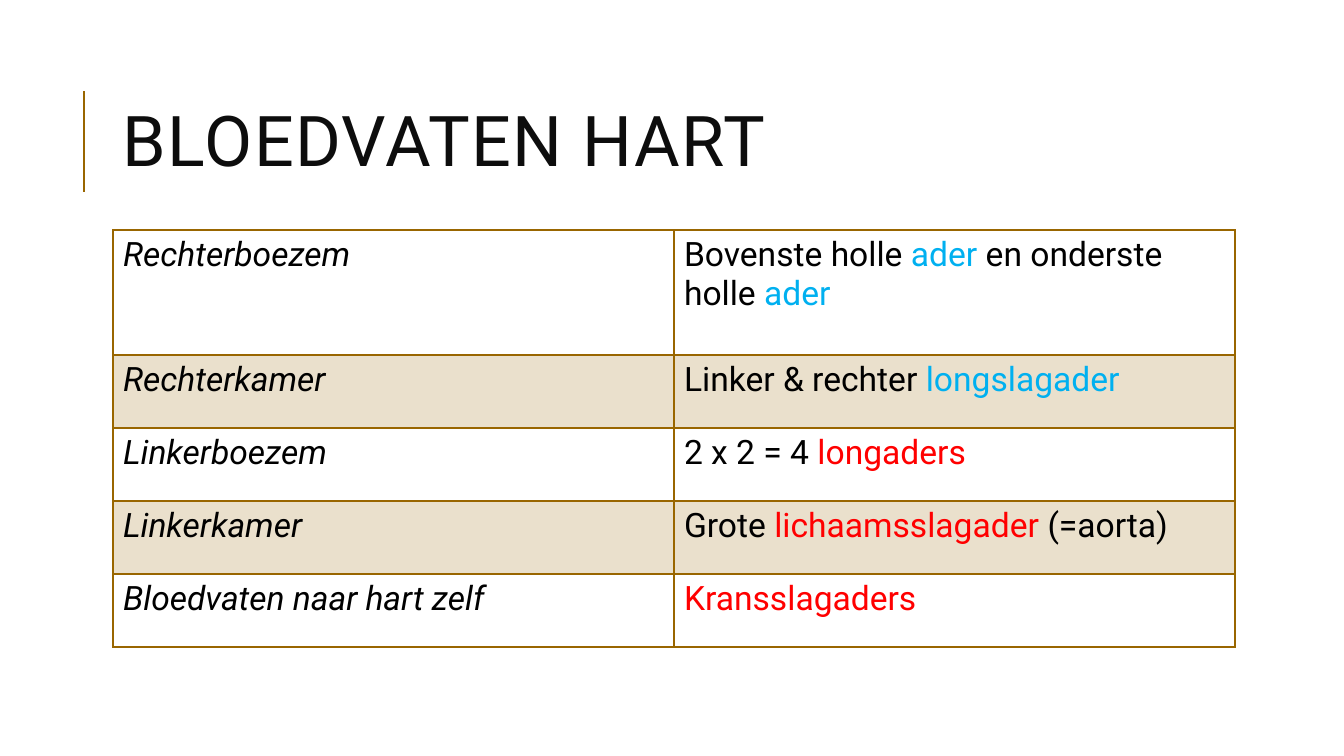
from lxml import etree
from pptx import Presentation
from pptx.dml.color import RGBColor
from pptx.enum.shapes import MSO_CONNECTOR
from pptx.enum.text import MSO_ANCHOR
from pptx.oxml.ns import qn
from pptx.util import Pt

STRAIGHT = MSO_CONNECTOR.STRAIGHT
MIDDLE = MSO_ANCHOR.MIDDLE

# Content
FONT = "Roboto"
BROWN, BLACK, INK = "996600", "000000", "0D0D0D"
BLUE, RED = "00B0F0", "FF0000"
TITLE = "BLOEDVATEN HART"
VESSELS = [
    ("Rechterboezem", [("Bovenste holle ", BLACK), ("ader", BLUE),
                       (" en onderste holle ", BLACK), ("ader", BLUE)]),
    ("Rechterkamer", [("Linker & rechter ", BLACK), ("longslagader", BLUE)]),
    ("Linkerboezem", [("2 x 2 = 4 ", BLACK), ("longaders", RED)]),
    ("Linkerkamer", [("Grote ", BLACK), ("lichaamsslagader", RED),
                     (" (=aorta)", BLACK)]),
    ("Bloedvaten naar hart zelf", [("Kransslagaders", RED)]),
]

# Layout in px
LEFT, TABLE_TOP = 113, 230
COL_W, FIRST_ROW_H, ROW_H = 561, 125, 73


def px(n):
    return round(n * 914400 / 100.8)


def rgb(value):
    return RGBColor.from_string(value)


def add_run(p, text, size, color, italic=False):
    r = p.add_run()
    r.text = text
    r.font.name = FONT
    r.font.size = Pt(size)
    r.font.color.rgb = rgb(color)
    r.font.italic = italic
    return r


def add_border(cell, side, width):
    ln = etree.SubElement(cell._tc.get_or_add_tcPr(), qn("a:ln" + side),
                          w=str(Pt(width)))
    fill = etree.SubElement(ln, qn("a:solidFill"))
    etree.SubElement(fill, qn("a:srgbClr"), val=BROWN)


prs = Presentation()
prs.slide_width, prs.slide_height = px(1344), px(756)
slide = prs.slides.add_slide(prs.slide_layouts[6])

# Accent line
line = slide.shapes.add_connector(STRAIGHT, px(84), px(192), px(84), px(91))
line.line.color.rgb = rgb(BROWN)
line.line.width = Pt(1.5)
etree.SubElement(line._element.spPr, qn("a:effectLst"))

# Title
tf = slide.shapes.add_textbox(px(LEFT), px(64), px(1072), px(165)).text_frame
tf.word_wrap = True
tf.vertical_anchor = MIDDLE
p = tf.paragraphs[0]
p.line_spacing = 0.8
r = add_run(p, TITLE, 50, INK)
r.font._element.set("spc", "100")

# Table
heights = [FIRST_ROW_H] + [ROW_H] * (len(VESSELS) - 1)
table = slide.shapes.add_table(len(VESSELS), 2, px(LEFT), px(TABLE_TOP),
                               px(2 * COL_W), px(sum(heights))).table
table.first_row = table.horz_banding = False
for col in table.columns:
    col.width = px(COL_W)

for i, (chamber, vessels) in enumerate(VESSELS):
    table.rows[i].height = px(heights[i])
    for j, runs in enumerate(([(chamber, BLACK)], vessels)):
        cell = table.cell(i, j)
        for text, color in runs:
            add_run(cell.text_frame.paragraphs[0], text, 24, color, j == 0)
        # The rule under the first row is heavier
        for side in "LRTB":
            heavy = (i, side) in ((0, "B"), (1, "T"))
            add_border(cell, side, 2 if heavy else 1)
        # Every second row is tinted
        if i % 2:
            cell.fill.solid()
            cell.fill.fore_color.rgb = rgb(BROWN)
            clr = cell._tc.tcPr.find(qn("a:solidFill")).find(qn("a:srgbClr"))
            etree.SubElement(clr, qn("a:alpha"), val="20000")
        else:
            cell.fill.background()

prs.save("out.pptx")
